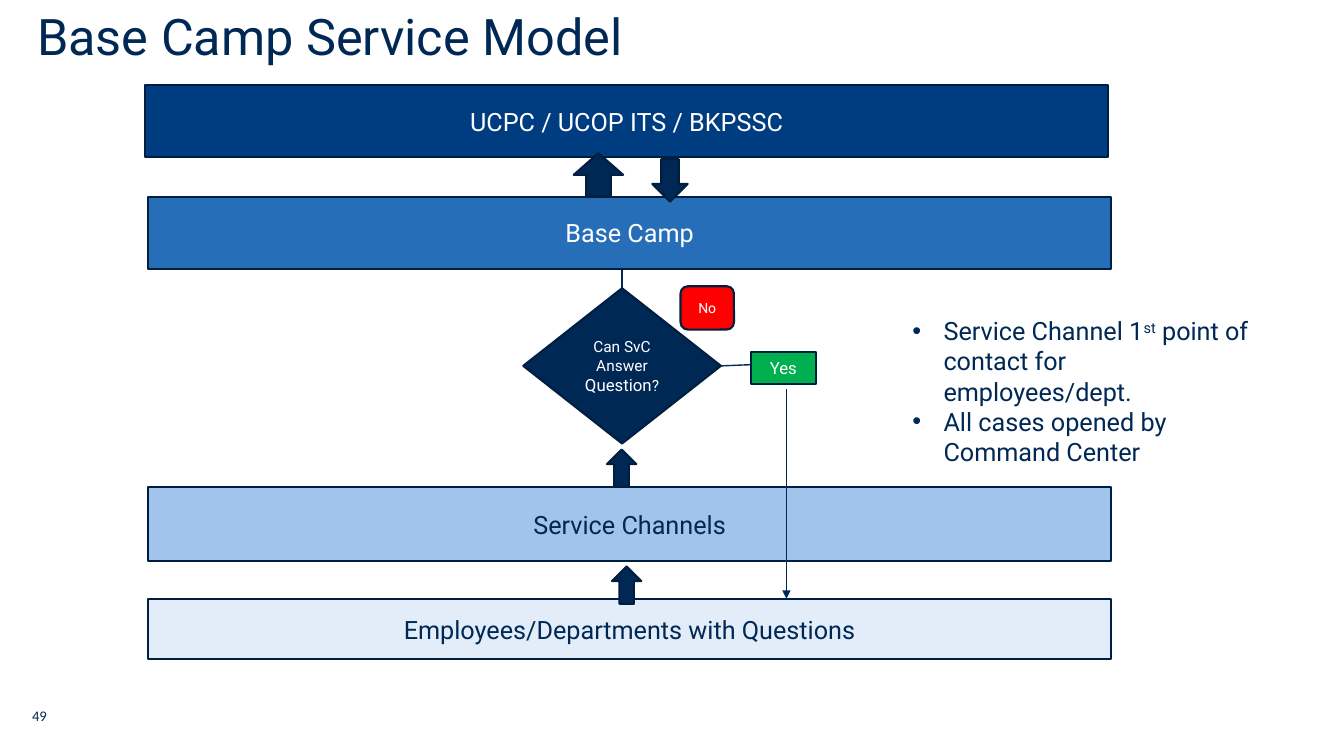
from lxml import etree
from pptx import Presentation
from pptx import util as u
from pptx.dml.color import RGBColor
from pptx.enum import shapes, text
from pptx.oxml.ns import qn

NAVY = RGBColor(0x00, 0x28, 0x55)
EDGE = RGBColor(0x00, 0x1E, 0x3F)
ROYAL = RGBColor(0x00, 0x3C, 0x80)
BLUE = RGBColor(0x27, 0x6E, 0xB8)
SKY = RGBColor(0xA0, 0xC4, 0xEB)
MIST = RGBColor(0xE2, 0xED, 0xF9)
RED = RGBColor(0xFF, 0x00, 0x00)
GREEN = RGBColor(0x00, 0xB0, 0x50)
WHITE = RGBColor(0xFF, 0xFF, 0xFF)

CELL = 0.1  # inches per grid column and row
BAND_LEFT, BAND_WIDTH = 14.7, 95.5
Kind = shapes.MSO_SHAPE


def grid(*cells):
    return [u.Inches(cell * CELL) for cell in cells]


class Board:
    """Holds the slide and its shared style; places are in grid cells."""

    def __init__(self, slide, font="Roboto"):
        self.slide = slide
        self.font = font

    def add_words(self, paragraph, words, size, color, font=None, raised=False):
        run = paragraph.add_run()
        run.text = words
        run.font.size = u.Pt(size)
        run.font.name = font or self.font
        run.font.color.rgb = color
        if raised:
            run.font._element.set("baseline", "30000")

    def shape(self, kind, place, fill, runs=(), color=WHITE):
        shape = self.slide.shapes.add_shape(kind, *grid(*place))
        shape.shadow.inherit = False
        shape.fill.solid()
        shape.fill.fore_color.rgb = fill
        shape.line.color.rgb = EDGE
        shape.line.width = u.Pt(1.5)
        frame = shape.text_frame
        frame.word_wrap = True
        frame.vertical_anchor = text.MSO_ANCHOR.MIDDLE
        paragraph = frame.paragraphs[0]
        paragraph.alignment = text.PP_ALIGN.CENTER
        for words, size in runs:
            self.add_words(paragraph, words, size, color)
        return shape

    def band(self, top, height, fill, label, color=WHITE, left=BAND_LEFT):
        place = (left, top, BAND_WIDTH, height)
        return self.shape(Kind.RECTANGLE, place, fill, [(label, 18)], color)

    def text(self, place):
        frame = self.slide.shapes.add_textbox(*grid(*place)).text_frame
        frame.word_wrap = True
        return frame

    def label(self, place, words, size, font=None):
        self.add_words(self.text(place).paragraphs[0], words, size, NAVY, font)

    def bullets(self, place, items, size):
        frame = self.text(place)
        for index, runs in enumerate(items):
            paragraph = frame.add_paragraph() if index else frame.paragraphs[0]
            props = paragraph._p.get_or_add_pPr()
            props.set("marL", str(u.Inches(0.31)))
            props.set("indent", str(u.Inches(-0.31)))
            color = etree.SubElement(props, qn("a:buClr"))
            etree.SubElement(color, qn("a:srgbClr"), val=str(NAVY))
            etree.SubElement(props, qn("a:buFont"), typeface="Arial")
            etree.SubElement(props, qn("a:buChar"), char="•")
            for words, raised in runs:
                self.add_words(paragraph, words, size, NAVY, raised=raised)

    def line(self, start, end, arrow=False, source=None, site=0):
        line = self.slide.shapes.add_connector(
            shapes.MSO_CONNECTOR.STRAIGHT, *grid(*start, *end))
        if source is not None:
            line.begin_connect(source, site)
        line.line.color.rgb = NAVY
        line.line.width = u.Pt(1)
        if arrow:
            etree.SubElement(line.line._get_or_add_ln(), qn("a:tailEnd"),
                             type="triangle")
        etree.SubElement(line._element.spPr, qn("a:effectLst"))


def main():
    deck = Presentation()
    deck.slide_width, deck.slide_height = u.Inches(13.33), u.Inches(7.5)
    board = Board(deck.slides.add_slide(deck.slide_layouts[6]))

    # Title and page number
    board.label((2.7, 0, 94, 14.4), "Base Camp Service Model", 36)
    board.label((2.2, 69.6, 7.8, 2.8), "49", 10.5, "Calibri")

    # Lower service levels
    board.band(59.4, 6, MIST, "Employees/Departments with Questions", NAVY)
    board.band(48.3, 7.4, SKY, "Service Channels", NAVY)

    # Decision and its "No" way up, which runs behind Base Camp
    decision = board.shape(
        Kind.DIAMOND, (51.9, 28.6, 19.6, 15.4), NAVY,
        [("Can SvC Answer ", 11), ("Question", 12), ("?", 11)])
    board.line((61.7, 28.6), (61.7, 24.8), arrow=True, source=decision, site=0)
    board.shape(Kind.ROUNDED_RECTANGLE, (67.5, 28.4, 5.3, 4.3), RED,
                [("No", 10)])

    # Upper service levels
    board.band(19.5, 7.2, BLUE, "Base Camp")
    board.band(8.4, 7.2, ROYAL, "UCPC / UCOP ITS / BKPSSC", left=14.4)

    # Block arrows between levels
    for kind, place in (
        (Kind.UP_ARROW, (60.7, 56.2, 2.9, 3.7)),
        (Kind.UP_ARROW, (60.2, 44.6, 2.9, 3.7)),
        (Kind.UP_ARROW, (56.9, 15.2, 4.9, 4.3)),
        (Kind.DOWN_ARROW, (64.7, 15.8, 3.5, 4.2)),
    ):
        board.shape(kind, place, NAVY)

    # "Yes" way back down to the employees
    board.line((71.5, 36.3), (76.4, 36.1), source=decision, site=3)
    board.line((78, 38.6), (78, 59.4), arrow=True)
    board.shape(Kind.RECTANGLE, (74.5, 34.9, 6.4, 3.2), GREEN, [("Yes", 12)])

    # Remarks
    board.bullets((89.5, 30.8, 35.9, 13.1), [
        [("Service Channel 1", False), ("st", True),
         (" point of contact for employees/dept.", False)],
        [("All cases opened by Command Center", False)],
    ], 18)

    deck.save("out.pptx")


if __name__ == "__main__":
    main()
